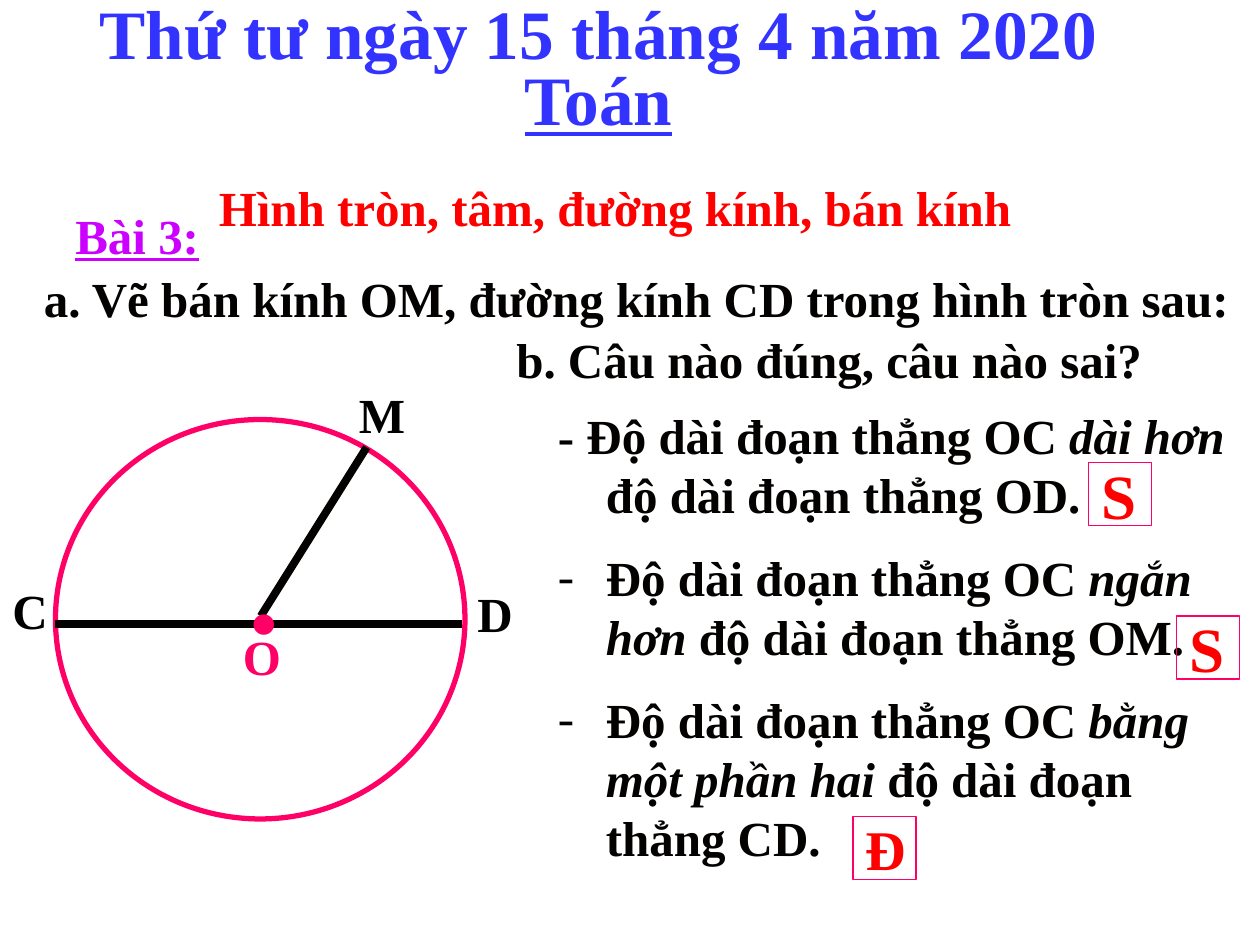
from lxml import etree
from pptx import Presentation
from pptx.dml.color import RGBColor
from pptx.enum.shapes import MSO_CONNECTOR, MSO_SHAPE
from pptx.enum.text import MSO_ANCHOR, MSO_AUTO_SIZE, PP_ALIGN
from pptx.oxml.ns import qn
from pptx.util import Inches, Pt

FONT = "Times New Roman"
WHITE = RGBColor(0xFF, 0xFF, 0xFF)
BLACK = RGBColor(0, 0, 0)
INK = RGBColor(0x03, 0x02, 0x01)
PINK = RGBColor(0xFF, 0x00, 0x66)
RED = RGBColor(0xFF, 0, 0)
BLUE = RGBColor(0x33, 0x33, 0xFF)
PURPLE = RGBColor(0xCC, 0x00, 0xFF)

STATEMENTS = [
    ("- Độ dài đoạn thẳng OC ", "dài hơn ", "độ dài đoạn thẳng OD."),
    ("Độ dài đoạn thẳng OC ", "ngắn hơn ", "độ dài đoạn thẳng OM."),
    ("Độ dài đoạn thẳng OC ", "bằng một phần hai ", "độ dài đoạn thẳng CD."),
]
POINT_LABELS = [
    ("O", 1.83, 4.92, 0.51, PINK),
    ("M", 2.75, 3, 0.57, BLACK),
    ("C", 0, 4.56, 0.49, BLACK),
    ("D", 3.69, 4.58, 0.5, BLACK),
]
ANSWERS = [("S", 8.64, 3.67, 36), ("S", 9.34, 4.89, 36), ("Đ", 6.77, 6.48, 32)]


def add_run(paragraph, text, color, size=28, italic=None, underline=None):
    run = paragraph.add_run()
    run.text = text
    font = run.font
    font.name, font.size, font.bold = FONT, Pt(size), True
    font.italic, font.underline = italic, underline
    font.color.rgb = color


def add_text(slide, box, text, color, size=28, wrap=True, align=None, underline=None):
    shape = slide.shapes.add_textbox(*map(Inches, box))
    shape.text_frame.word_wrap = wrap
    paragraph = shape.text_frame.paragraphs[0]
    paragraph.alignment = align
    add_run(paragraph, text, color, size, underline=underline)
    return paragraph


def add_outline(slide, kind, box, color, width):
    """Add an unfilled shape whose text starts at the top left."""
    shape = slide.shapes.add_shape(kind, *map(Inches, box))
    shape.shadow.inherit = False
    shape.fill.background()
    shape.line.color.rgb = color
    shape.line.width = Pt(width)
    shape.text_frame.vertical_anchor = MSO_ANCHOR.TOP
    shape.text_frame.paragraphs[0].alignment = PP_ALIGN.LEFT
    return shape


def add_segment(slide, start, end):
    line = slide.shapes.add_connector(
        MSO_CONNECTOR.STRAIGHT, *map(Inches, start + end))
    line.line.color.rgb = INK
    line.line.width = Pt(4.5)
    etree.SubElement(line._element.spPr, qn("a:effectLst"))


def set_hanging_indent(paragraph, bullet=None):
    properties = paragraph._p.get_or_add_pPr()
    properties.set("marL", str(Inches(0.38)))
    properties.set("indent", str(-Inches(0.38)))
    if bullet:
        etree.SubElement(properties, qn("a:buFont"), typeface=FONT)
        etree.SubElement(properties, qn("a:buChar"), char=bullet)


def add_statements(slide):
    shape = add_outline(slide, MSO_SHAPE.RECTANGLE, (4.33, 3.17, 5.75, 3.87), WHITE, 6)
    frame = shape.text_frame
    frame.auto_size = MSO_AUTO_SIZE.SHAPE_TO_FIT_TEXT
    for index, (subject, comparison, rest) in enumerate(STATEMENTS):
        paragraph = frame.add_paragraph() if index else frame.paragraphs[0]
        paragraph.alignment = PP_ALIGN.LEFT
        if index:
            paragraph.space_before = Pt(14)
        set_hanging_indent(paragraph, "-" if index else None)
        add_run(paragraph, subject, INK)
        add_run(paragraph, comparison, INK, italic=True)
        add_run(paragraph, rest, INK)


def add_circle_figure(slide):
    add_outline(slide, MSO_SHAPE.OVAL, (0.44, 3.33, 3.25, 3.17), PINK, 3)
    add_segment(slide, (0.44, 4.95), (3.67, 4.95))
    add_segment(slide, (2.91, 3.55), (2.07, 4.89))
    for letter, left, top, width, color in POINT_LABELS:
        add_text(slide, (left, top, width, 0.57), letter, color, wrap=False)
    add_text(slide, (1.87, 3.98, 0.75, 1.3), ".", PINK, size=72)


def add_answer(slide, letter, left, top, size):
    shape = add_outline(slide, MSO_SHAPE.RECTANGLE, (left, top, 0.5, 0.5), PINK, 0.75)
    frame = shape.text_frame
    frame.word_wrap = False
    frame.vertical_anchor = MSO_ANCHOR.MIDDLE
    add_run(frame.paragraphs[0], letter, RED, size)


def add_headings(slide):
    title = add_text(slide, (0, 0, 9.5, 1.28), "Thứ tư ngày 15 tháng 4 năm 2020",
                     BLUE, 39.6, align=PP_ALIGN.CENTER)
    title.line_spacing = 0.8
    title.add_line_break()
    add_run(title, "Toán", BLUE, 39.6, underline=True)
    topic = add_text(slide, (0.17, 1.36, 9.42, 0.75),
                     "Hình tròn, tâm, đường kính, bán kính", RED, align=PP_ALIGN.CENTER)
    set_hanging_indent(topic)
    add_text(slide, (0.5, 1.58, 1.42, 0.57), "Bài 3:", PURPLE, underline=True)


def add_questions(slide):
    draw = add_outline(slide, MSO_SHAPE.RECTANGLE, (0.25, 2.08, 10, 0.57), WHITE, 6)
    add_run(draw.text_frame.paragraphs[0],
            "a. Vẽ bán kính OM, đường kính CD trong hình tròn sau:", INK)
    add_text(slide, (3.58, 2.57, 6, 0.57), "b. Câu nào đúng, câu nào sai?",
             INK, align=PP_ALIGN.CENTER)


def main():
    presentation = Presentation()
    presentation.slide_width, presentation.slide_height = Inches(10), Inches(7.5)
    slide = presentation.slides.add_slide(presentation.slide_layouts[6])
    add_questions(slide)
    add_statements(slide)
    add_circle_figure(slide)
    add_headings(slide)
    for answer in ANSWERS:
        add_answer(slide, *answer)
    presentation.save("out.pptx")


if __name__ == "__main__":
    main()
